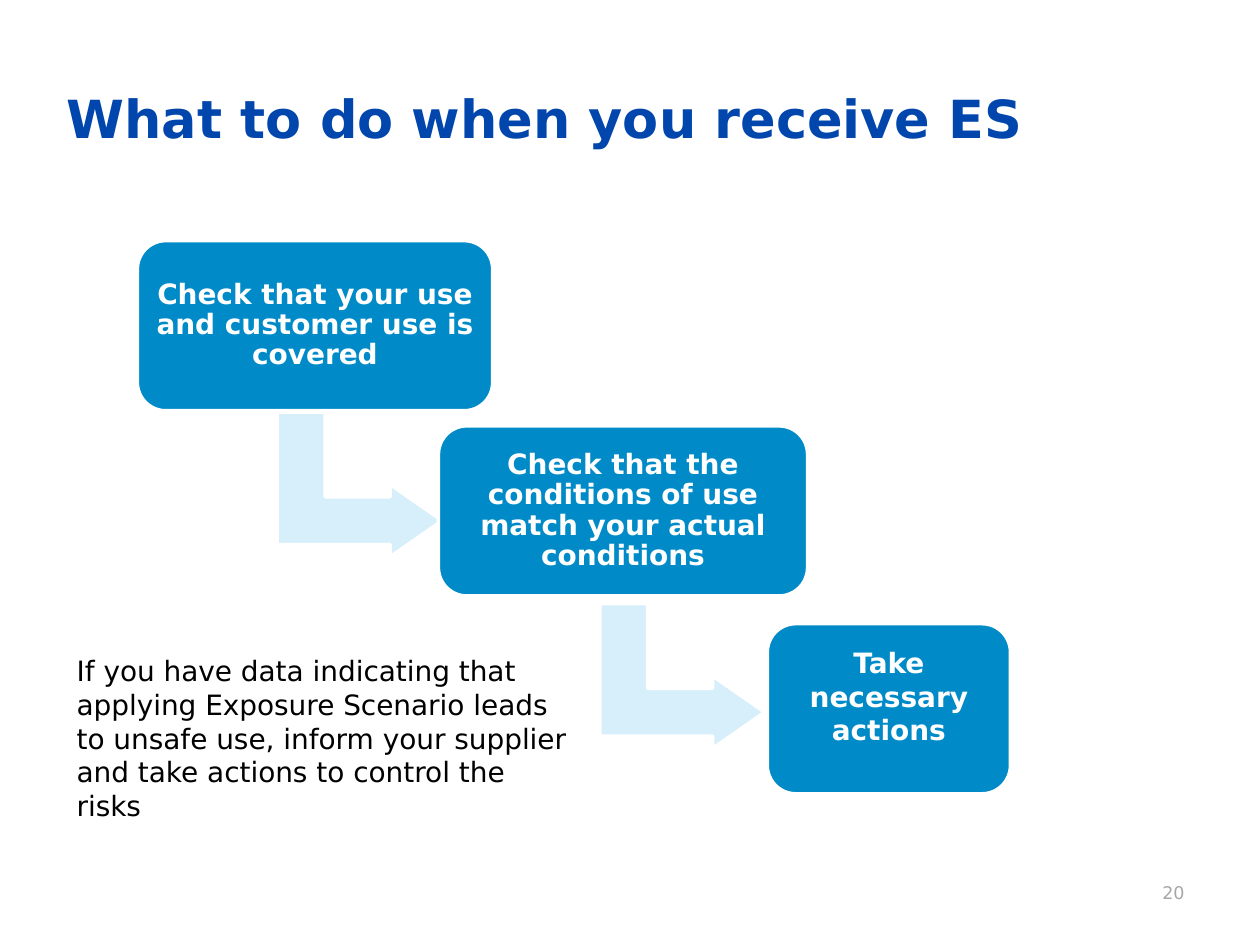
from dataclasses import dataclass
from typing import Optional

from pptx import Presentation
from pptx.dml.color import RGBColor
from pptx.enum.shapes import MSO_SHAPE
from pptx.enum.text import MSO_ANCHOR, MSO_AUTO_SIZE, PP_ALIGN
from pptx.util import Inches, Pt

FONT = "DejaVu Sans"
BLUE, PALE, WHITE = "008BC8", "D7EFFA", "FFFFFF"
PAD = 0.06


@dataclass
class Step:
    """A box of the staircase and the arrow that leaves it."""
    text: str
    left: float
    top: float
    width: float
    arrow: Optional[tuple[float, float]] = None
    space: float = 0.9
    foot: float = PAD


STEPS = [
    Step("Check that your use and customer use is covered",
         1.09, 1.91, 2.82, arrow=(2.28, 3.19)),
    Step("Check that the conditions of use match your actual conditions",
         3.48, 3.38, 2.93, arrow=(4.84, 4.71)),
    Step("Take necessary actions", 6.09, 4.95, 1.93, space=1.0, foot=0.26),
]


def color(code: str) -> RGBColor:
    """Turn a hex string into a colour."""
    return RGBColor.from_string(code)


def write(frame, text: str, size: float, code: str, bold: bool = False,
          align=PP_ALIGN.LEFT, space: Optional[float] = None, **form) -> None:
    """Write one paragraph and set the format of its frame."""
    for name, value in ({"word_wrap": True} | form).items():
        setattr(frame, name, value)
    para = frame.paragraphs[0]
    para.alignment = align
    para.line_spacing = space
    run = para.add_run()
    run.text = text
    look = {"name": FONT, "size": Pt(size), "bold": bold}
    for name, value in look.items():
        setattr(run.font, name, value)
    run.font.color.rgb = color(code)


def add_block(slide, kind, box: tuple, fill: str):
    """Add a flat preset shape with a white edge."""
    shape = slide.shapes.add_shape(kind, *map(Inches, box))
    shape.shadow.inherit = False
    shape.fill.solid()
    shape.fill.fore_color.rgb = color(fill)
    shape.line.color.rgb = color(WHITE)
    shape.line.width = Pt(2)
    return shape


def add_arrow(slide, left: float, top: float) -> None:
    """Add a bent arrow that runs down and then right."""
    arrow = add_block(slide, MSO_SHAPE.BENT_UP_ARROW,
                      (left, top, 1.15, 1.31), PALE)
    arrow.rotation = 90
    for index, value in enumerate((0.33, 0.25, 0.36)):
        arrow.adjustments[index] = value


def add_step(slide, step: Step) -> None:
    """Add the arrow and the box of one step."""
    if step.arrow:
        add_arrow(slide, *step.arrow)
    box = add_block(slide, MSO_SHAPE.ROUNDED_RECTANGLE,
                    (step.left, step.top, step.width, 1.35), BLUE)
    sides = {f"margin_{side}": Inches(PAD) for side in ("left", "right", "top")}
    write(box.text_frame, step.text, 16, WHITE, True, PP_ALIGN.CENTER,
          step.space, vertical_anchor=MSO_ANCHOR.MIDDLE,
          margin_bottom=Inches(step.foot), **sides)


def add_note(slide, box: tuple, *args, **form) -> None:
    """Add a plain text box."""
    note = slide.shapes.add_textbox(*map(Inches, box))
    write(note.text_frame, *args, **form)


def main() -> None:
    """Build and save the slide."""
    deck = Presentation()
    deck.slide_width, deck.slide_height = Inches(10), Inches(7.5)
    slide = deck.slides.add_slide(deck.slide_layouts[5])
    title = slide.shapes.title
    place = {"left": 0.43, "top": 0.63, "width": 8.82, "height": 0.59}
    for name, value in place.items():
        setattr(title, name, Inches(value))
    write(title.text_frame, "What to do when you receive ES", 30, "0046AD", True,
          vertical_anchor=MSO_ANCHOR.TOP, auto_size=MSO_AUTO_SIZE.NONE)
    for step in STEPS:
        add_step(slide, step)
    add_note(slide, (0.51, 5.14, 4.1, 1.45),
             "If you have data indicating that applying Exposure Scenario leads "
             "to unsafe use, inform your supplier and take actions to control "
             "the risks", 16, "000000",
             auto_size=MSO_AUTO_SIZE.SHAPE_TO_FIT_TEXT)
    add_note(slide, (7.17, 6.95, 2.33, 0.4), "20", 10, "A6A6A6",
             align=PP_ALIGN.RIGHT)
    deck.save("out.pptx")


if __name__ == "__main__":
    main()
